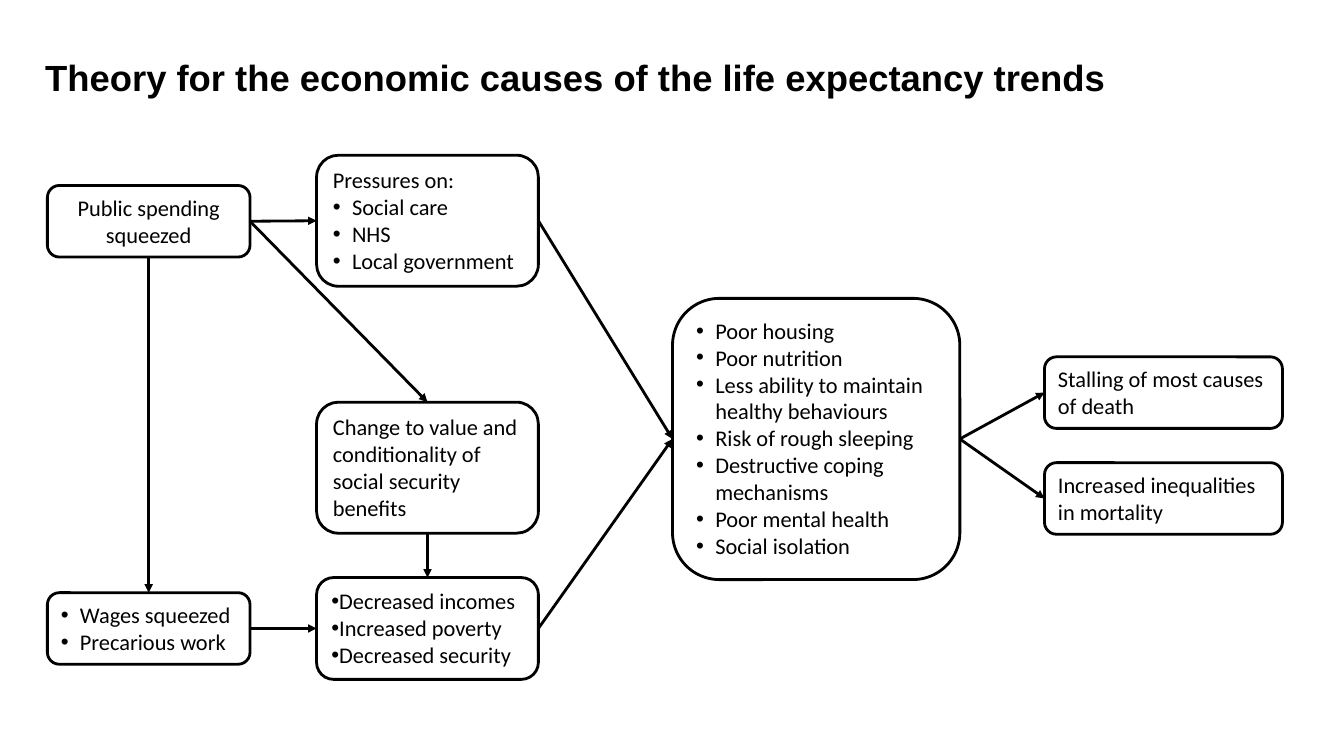
from lxml import etree
from pptx import Presentation
from pptx.dml.color import RGBColor
from pptx.enum.shapes import MSO_CONNECTOR, MSO_SHAPE
from pptx.enum.text import MSO_ANCHOR, MSO_AUTO_SIZE, PP_ALIGN
from pptx.oxml.ns import qn
from pptx.util import Pt

ROUNDED = MSO_SHAPE.ROUNDED_RECTANGLE
STRAIGHT = MSO_CONNECTOR.STRAIGHT
TOP, MIDDLE = MSO_ANCHOR.TOP, MSO_ANCHOR.MIDDLE
LEFT, CENTER = PP_ALIGN.LEFT, PP_ALIGN.CENTER
GROW = MSO_AUTO_SIZE.SHAPE_TO_FIT_TEXT

# Content: 100 px to the inch
PX = 9144
SLIDE_W, SLIDE_H = 1333, 750
COLORS = {"ink": "000000", "paper": "FFFFFF"}
HANGING, TIGHT = 19, 0  # bullet indents
PLAIN = None

TITLE = "Theory for the economic causes of the life expectancy trends"
TITLE_AT = (35, 44, 1237, 70)

# Columns: left, width
COLUMNS = {
    "drivers": (47, 201),
    "pressures": (314, 220),
    "effects": (667, 285),
    "outcomes": (1036, 236),
}

# Boxes: column, top, height, anchor, alignment, [(text, bullet indent)]
BOXES = {
    "spending": ("drivers", 184, 71, MIDDLE, CENTER,
                 [("Public spending squeezed", PLAIN)]),
    "wages": ("drivers", 588, 71, MIDDLE, LEFT,
              [("Wages squeezed", HANGING), ("Precarious work", HANGING)]),
    "services": ("pressures", 154, 130, TOP, LEFT,
                 [("Pressures on:", PLAIN), ("Social care", HANGING),
                  ("NHS", HANGING), ("Local government", HANGING)]),
    "benefits": ("pressures", 399, 130, TOP, LEFT,
                 [("Change to value and conditionality of social security benefits", PLAIN)]),
    "incomes": ("pressures", 573, 101, TOP, LEFT,
                [("Decreased incomes", TIGHT), ("Increased poverty", TIGHT),
                 ("Decreased security", TIGHT)]),
    "living": ("effects", 296, 279, TOP, LEFT,
               [("Poor housing", HANGING), ("Poor nutrition", HANGING),
                ("Less ability to maintain healthy behaviours", HANGING),
                ("Risk of rough sleeping", HANGING),
                ("Destructive coping mechanisms", HANGING),
                ("Poor mental health", HANGING), ("Social isolation", HANGING)]),
    "stalling": ("outcomes", 354, 71, TOP, LEFT,
                 [("Stalling of most causes of death", PLAIN)]),
    "inequality": ("outcomes", 459, 71, TOP, LEFT,
                   [("Increased inequalities in mortality", PLAIN)]),
}

# Arrows: from box, side, to box, side
SIDES = {"top": 0, "left": 1, "bottom": 2, "right": 3}
ARROWS = [
    ("spending", "bottom", "wages", "top"),
    ("wages", "right", "incomes", "left"),
    ("benefits", "bottom", "incomes", "top"),
    ("spending", "right", "services", "left"),
    ("spending", "right", "benefits", "top"),
    ("living", "right", "stalling", "left"),
    ("incomes", "right", "living", "left"),
    ("services", "right", "living", "left"),
    ("living", "right", "inequality", "left"),
]


def color(name):
    return RGBColor.from_string(COLORS[name])


def emu(*lengths):
    return [n * PX for n in lengths]


def style_run(p, font, size, bold=False):
    r = p.runs[0]
    r.font.name = font
    r.font.size = Pt(size)
    r.font.bold = bold
    r.font.color.rgb = color("ink")


def add_bullet(p, indent):
    pPr = p._p.get_or_add_pPr()
    pPr.set("marL", str(indent * PX))
    pPr.set("indent", str(-indent * PX))
    etree.SubElement(pPr, qn("a:buFont")).set("typeface", "Arial")
    etree.SubElement(pPr, qn("a:buChar")).set("char", "•")


def add_title(slide):
    sp = slide.shapes.add_textbox(*emu(*TITLE_AT))
    tf = sp.text_frame
    tf.word_wrap = True
    tf.vertical_anchor = MIDDLE
    tf.text = TITLE
    p = tf.paragraphs[0]
    p.line_spacing = 0.9
    style_run(p, "Arial", 26, bold=True)


def add_box(slide, column, top, height, anchor, align, lines):
    left, width = COLUMNS[column]
    sp = slide.shapes.add_shape(ROUNDED, *emu(left, top, width, height))
    sp.shadow.inherit = False
    sp.fill.solid()
    sp.fill.fore_color.rgb = color("paper")
    sp.line.color.rgb = color("ink")
    sp.line.width = Pt(2)
    tf = sp.text_frame
    tf.word_wrap = True
    tf.auto_size = GROW
    tf.vertical_anchor = anchor
    tf.text = "\n".join(text for text, _ in lines)
    for p, (_, indent) in zip(tf.paragraphs, lines):
        p.alignment = align
        style_run(p, "Calibri", 16)
        if indent is not PLAIN:
            add_bullet(p, indent)
    return sp


def add_arrow(slide, start, start_side, end, end_side):
    line = slide.shapes.add_connector(STRAIGHT, 0, 0, 0, 0)
    line.begin_connect(start, SIDES[start_side])
    line.end_connect(end, SIDES[end_side])
    line.line.color.rgb = color("ink")
    line.line.width = Pt(2)
    spPr = line._element.spPr
    etree.SubElement(spPr.find(qn("a:ln")), qn("a:tailEnd")).set("type", "triangle")
    etree.SubElement(spPr, qn("a:effectLst"))


def main():
    prs = Presentation()
    prs.slide_width, prs.slide_height = emu(SLIDE_W, SLIDE_H)
    slide = prs.slides.add_slide(prs.slide_layouts[6])

    add_title(slide)
    boxes = {name: add_box(slide, *box) for name, box in BOXES.items()}
    for start, start_side, end, end_side in ARROWS:
        add_arrow(slide, boxes[start], start_side, boxes[end], end_side)

    prs.save("out.pptx")


if __name__ == "__main__":
    main()
